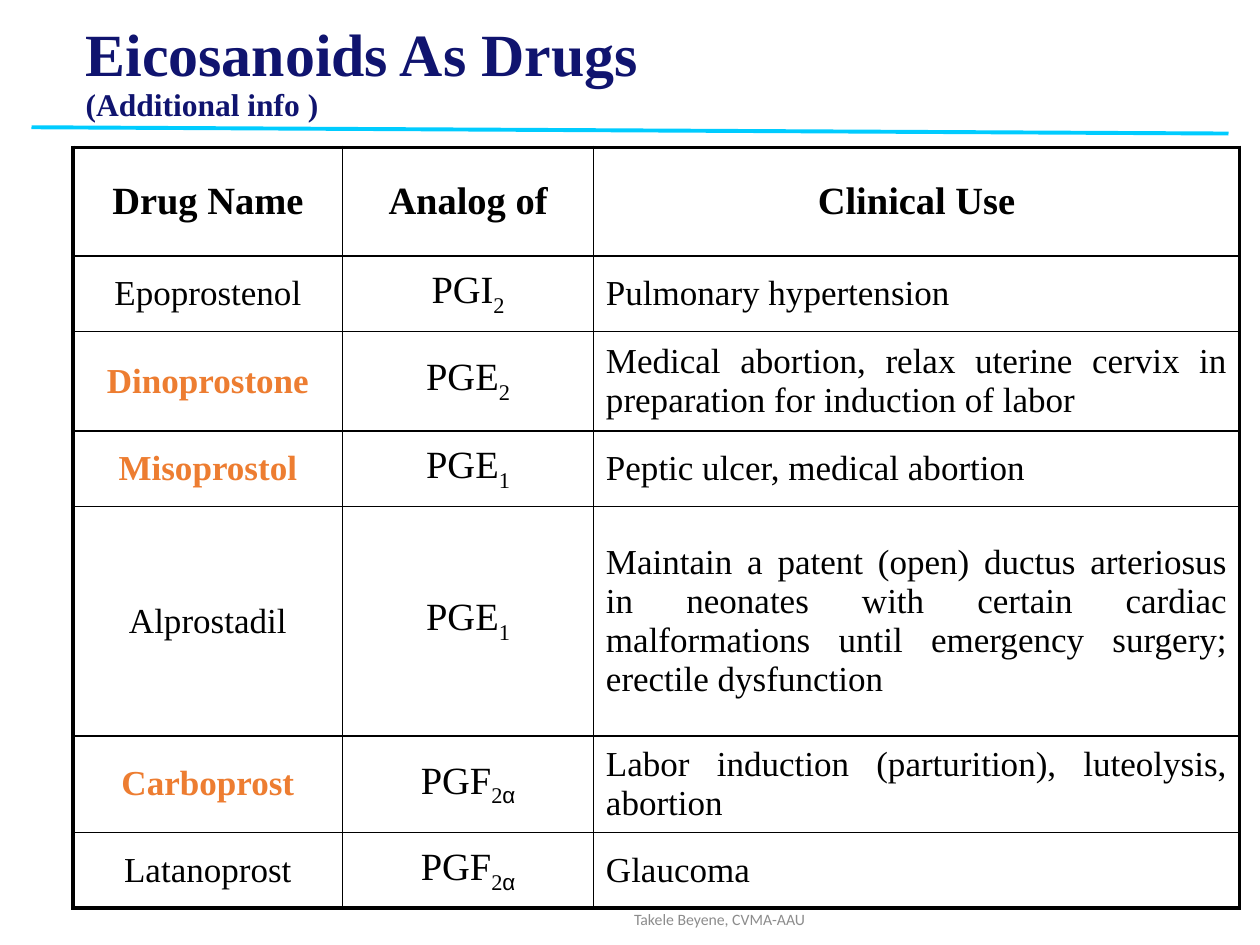
from dataclasses import dataclass

from lxml import etree
from pptx import Presentation
from pptx.dml.color import RGBColor
from pptx.enum.shapes import MSO_CONNECTOR
from pptx.enum.text import MSO_ANCHOR, MSO_AUTO_SIZE, PP_ALIGN
from pptx.oxml.ns import qn
from pptx.util import Inches, Pt

CENTER, LEFT, JUSTIFY = PP_ALIGN.CENTER, PP_ALIGN.LEFT, PP_ALIGN.JUSTIFY
MIDDLE = MSO_ANCHOR.MIDDLE
NO_AUTOFIT = MSO_AUTO_SIZE.NONE
STRAIGHT = MSO_CONNECTOR.STRAIGHT

SERIF, SANS, FOOTER_FONT = "Times New Roman", "Arial", "Calibri"
BLACK, NAVY, ORANGE, CYAN, GREY = "000000", "10146F", "ED7D31", "00CCFF", "8C8C8C"
THICK, THIN = 2.25, 1

COLUMN_WIDTHS = (2.14, 1.99, 5.13)
ROW_HEIGHTS = (0.86, 0.6, 0.79, 0.6, 1.82, 0.74, 0.6)
HEADINGS = ("Drug Name", "Analog of", "Clinical Use")


@dataclass
class Drug:
    name: str
    analog: str
    number: str
    use: str
    greek: str = ""
    highlighted: bool = False


DRUGS = (
    Drug("Epoprostenol", "PGI", "2", "Pulmonary hypertension"),
    Drug("Dinoprostone", "PGE", "2", "Medical abortion, relax uterine cervix in "
         "preparation for induction of labor", highlighted=True),
    Drug("Misoprostol", "PGE", "1", "Peptic ulcer, medical abortion", highlighted=True),
    Drug("Alprostadil", "PGE", "1", "Maintain a patent (open) ductus arteriosus in "
         "neonates with certain cardiac malformations until emergency surgery; "
         "erectile dysfunction"),
    Drug("Carboprost", "PGF", "2", "Labor induction (parturition), luteolysis, abortion",
         greek="α", highlighted=True),
    Drug("Latanoprost", "PGF", "2", "Glaucoma", greek="α"),
)


@dataclass
class Run:
    text: str
    size: float
    color: str = BLACK
    bold: bool = False
    font: str = SERIF
    subscript: bool = False


def rgb(color: str) -> RGBColor:
    return RGBColor.from_string(color)


def add_run(paragraph, part: Run) -> None:
    run = paragraph.add_run()
    run.text = part.text
    run.font.size, run.font.name, run.font.bold = Pt(part.size), part.font, part.bold
    run.font.color.rgb = rgb(part.color)
    if part.subscript:
        run.font._element.set("baseline", "-25000")


def set_border(cell, side: str, width: float) -> None:
    line = etree.SubElement(cell._tc.get_or_add_tcPr(), qn(f"a:{side}"), w=str(Pt(width)))
    fill = etree.SubElement(line, qn("a:solidFill"))
    etree.SubElement(fill, qn("a:srgbClr"), val=BLACK)


def fill_cell(table, row: int, column: int, align, runs: list[Run]) -> None:
    cell = table.cell(row, column)
    cell.vertical_anchor = MIDDLE
    paragraph = cell.text_frame.paragraphs[0]
    paragraph.alignment = align
    # Space before, as a share of the line height
    spacing = etree.SubElement(paragraph._p.get_or_add_pPr(), qn("a:spcBef"))
    etree.SubElement(spacing, qn("a:spcPct"), val="20000")
    for part in runs:
        add_run(paragraph, part)
    # Thick frame outside, thin rules inside
    outer = {"lnL": column == 0, "lnR": column == len(COLUMN_WIDTHS) - 1,
             "lnT": row == 0, "lnB": row == len(ROW_HEIGHTS) - 1}
    for side, is_outer in outer.items():
        set_border(cell, side, THICK if is_outer else THIN)
    cell.fill.background()


def add_title(slide) -> None:
    title = slide.shapes.title
    title.left, title.top = Inches(0.58), Inches(0.17)
    title.width, title.height = Inches(8.83), Inches(0.83)
    frame = title.text_frame
    frame.auto_size, frame.vertical_anchor = NO_AUTOFIT, MIDDLE
    paragraph = frame.paragraphs[0]
    paragraph.alignment, paragraph.line_spacing = LEFT, 0.9
    add_run(paragraph, Run("Eicosanoids As Drugs", 34.2, NAVY, True))
    paragraph.add_line_break()
    add_run(paragraph, Run("(Additional info )", 18, NAVY, True))


def add_footer(slide) -> None:
    box = slide.shapes.add_textbox(Inches(2), Inches(7.17), Inches(7.42), Inches(0.25))
    frame = box.text_frame
    frame.word_wrap, frame.vertical_anchor = True, MIDDLE
    frame.paragraphs[0].alignment = CENTER
    add_run(frame.paragraphs[0], Run("Takele Beyene, CVMA-AAU", 9, GREY, font=FOOTER_FONT))


def add_drug_table(slide) -> None:
    table = slide.shapes.add_table(
        len(ROW_HEIGHTS), len(COLUMN_WIDTHS), Inches(0.58), Inches(1.17),
        Inches(sum(COLUMN_WIDTHS)), Inches(sum(ROW_HEIGHTS))).table
    table.first_row = table.horz_banding = False
    for column, width in zip(table.columns, COLUMN_WIDTHS):
        column.width = Inches(width)
    for row, height in zip(table.rows, ROW_HEIGHTS):
        row.height = Inches(height)

    for column, heading in enumerate(HEADINGS):
        fill_cell(table, 0, column, CENTER, [Run(heading, 22, bold=True)])
    for row, drug in enumerate(DRUGS, start=1):
        name_color = ORANGE if drug.highlighted else BLACK
        analog = [Run(drug.analog, 22), Run(drug.number, 22, subscript=True)]
        if drug.greek:
            analog.append(Run(drug.greek, 22, font=SANS, subscript=True))
        fill_cell(table, row, 0, CENTER, [Run(drug.name, 20, name_color, drug.highlighted)])
        fill_cell(table, row, 1, CENTER, analog)
        fill_cell(table, row, 2, JUSTIFY, [Run(drug.use, 20)])


def add_title_rule(slide) -> None:
    rule = slide.shapes.add_connector(
        STRAIGHT, Inches(0.25), Inches(1.01), Inches(9.75), Inches(1.06))
    rule.line.color.rgb, rule.line.width = rgb(CYAN), Pt(THICK)
    etree.SubElement(rule._element.spPr, qn("a:effectLst"))


def main() -> None:
    deck = Presentation()
    deck.slide_width, deck.slide_height = Inches(10), Inches(7.5)
    slide = deck.slides.add_slide(deck.slide_layouts.get_by_name("Title Only"))
    add_title(slide)
    add_footer(slide)
    add_drug_table(slide)
    add_title_rule(slide)
    deck.save("out.pptx")


if __name__ == "__main__":
    main()
